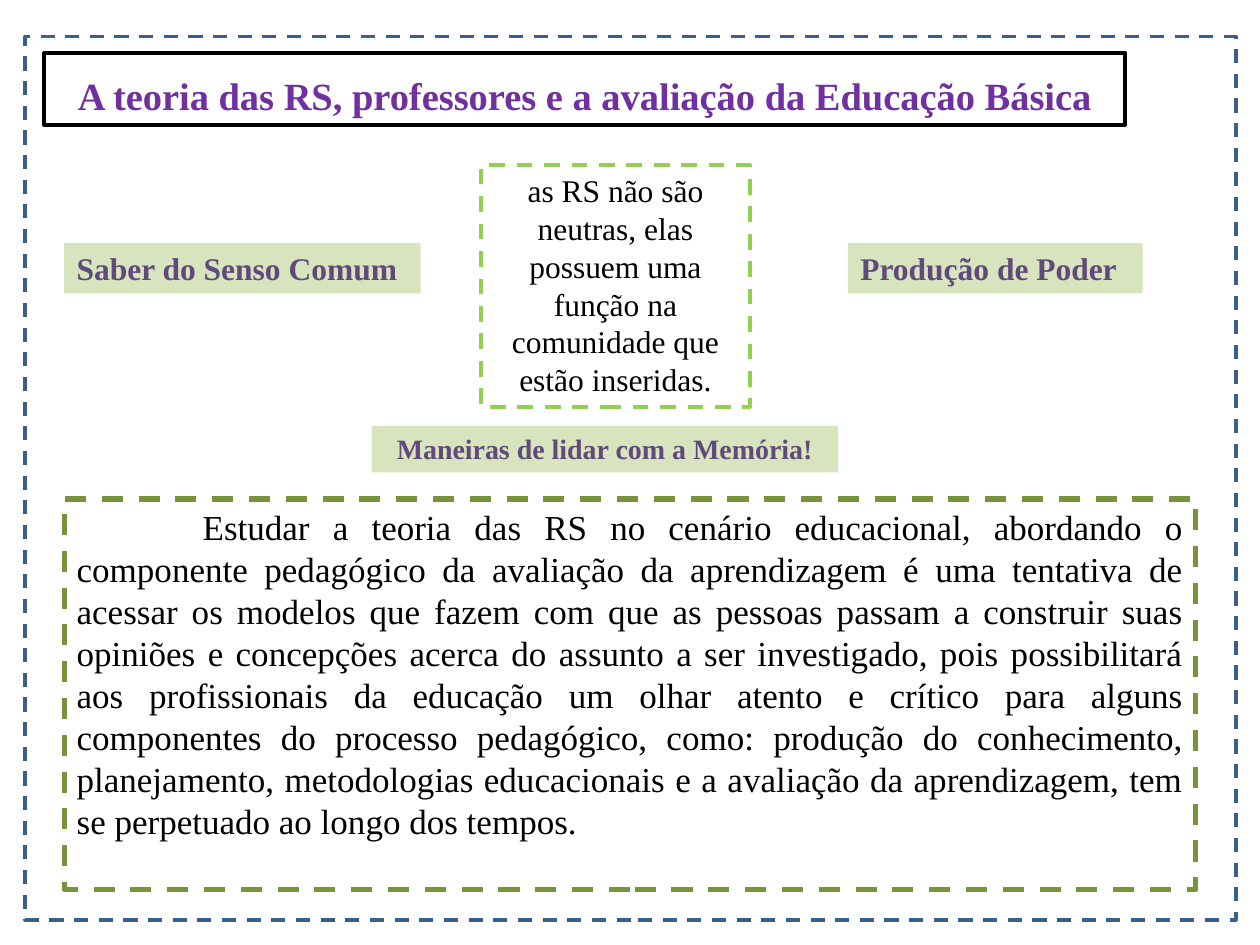
import pptx
import pptx.dml.color
import pptx.enum.dml
import pptx.enum.shapes
import pptx.enum.text
import pptx.util

COLORS = {
    "frame": "3A5F8C",
    "olive": "77933C",
    "lime": "92D050",
    "label": "D7E4BD",
    "violet": "604A7B",
    "purple": "7030A0",
    "black": "000000",
}
ALIGN = pptx.enum.text.PP_ALIGN
ANCHOR = pptx.enum.text.MSO_ANCHOR
BODY = (
    "Estudar a teoria das RS no cenário educacional, abordando o componente "
    "pedagógico da avaliação da aprendizagem é uma tentativa de acessar os modelos "
    "que fazem com que as pessoas passam a construir suas opiniões e concepções "
    "acerca do assunto a ser investigado, pois possibilitará aos profissionais da "
    "educação um olhar atento e crítico para alguns componentes do processo "
    "pedagógico, como: produção do conhecimento, planejamento, metodologias "
    "educacionais e a avaliação da aprendizagem, tem se perpetuado ao longo dos tempos."
)


def rgb(name):
    return pptx.dml.color.RGBColor.from_string(COLORS[name])


def write_text(shape, text, size=18, color="black", bold=False, align=ALIGN.LEFT,
               anchor=ANCHOR.TOP, indent=0):
    """Fill the shape with one paragraph; indent is that of its first line, in inches."""
    frame = shape.text_frame
    frame.word_wrap = True
    frame.vertical_anchor = anchor
    paragraph = frame.paragraphs[0]
    paragraph.alignment = align
    if indent:
        paragraph._p.get_or_add_pPr().set("indent", str(pptx.util.Inches(indent)))
    run = paragraph.add_run()
    run.text = text
    run.font.name = "Times New Roman"
    run.font.size = pptx.util.Pt(size)
    run.font.bold = bold
    run.font.color.rgb = rgb(color)


class SlideBuilder:
    """Places elements on a grid of 100 columns by 75 rows."""

    columns, rows = 100, 75

    def __init__(self, presentation):
        self.slide = presentation.slides.add_slide(presentation.slide_layouts[6])
        self.column = presentation.slide_width / self.columns
        self.row = presentation.slide_height / self.rows

    def place(self, left, top, width, height):
        return (round(left * self.column), round(top * self.row),
                round(width * self.column), round(height * self.row))

    def outline(self, shape, color, width, dashed=True):
        shape.line.color.rgb = rgb(color)
        shape.line.width = pptx.util.Pt(width)
        if dashed:
            shape.line.dash_style = pptx.enum.dml.MSO_LINE.DASH

    def frame(self, area, color, width):
        shape = self.slide.shapes.add_shape(
            pptx.enum.shapes.MSO_SHAPE.RECTANGLE, *self.place(*area))
        shape.shadow.inherit = False
        shape.fill.background()
        self.outline(shape, color, width)

    def outlined_text(self, area, text, line_color, line_width, dashed=True, **text_format):
        box = self.slide.shapes.add_textbox(*self.place(*area))
        self.outline(box, line_color, line_width, dashed)
        write_text(box, text, **text_format)

    def label(self, area, text, **text_format):
        box = self.slide.shapes.add_textbox(*self.place(*area))
        box.fill.solid()
        box.fill.fore_color.rgb = rgb("label")
        write_text(box, text, color="violet", bold=True, **text_format)


def main():
    presentation = pptx.Presentation()
    presentation.slide_width = pptx.util.Inches(10)
    presentation.slide_height = pptx.util.Inches(7.5)
    builder = SlideBuilder(presentation)

    builder.frame((2, 2.9, 96.1, 70.1), "frame", 2)
    builder.outlined_text((5.1, 39.6, 89.8, 31), BODY, "olive", 3,
                          size=20, align=ALIGN.JUSTIFY, indent=1)
    builder.label((29.5, 33.8, 37, 3.7), "Maneiras de lidar com a Memória!",
                  size=16, align=ALIGN.CENTER)
    builder.label((5.1, 19.3, 28.3, 4), "Saber do Senso Comum")
    builder.label((67.3, 19.3, 23.4, 4), "Produção de Poder")
    builder.outlined_text(
        (38.2, 13.1, 21.3, 19.2),
        "as RS não são neutras, elas possuem uma função na comunidade que estão inseridas.",
        "lime", 2.25, align=ALIGN.CENTER)
    builder.outlined_text(
        (3.5, 4.2, 85.8, 5.7),
        "A teoria das RS, professores e a avaliação da Educação Básica",
        "black", 2.25, dashed=False, size=22, color="purple", bold=True,
        align=ALIGN.CENTER, anchor=ANCHOR.BOTTOM)

    presentation.save("out.pptx")


if __name__ == "__main__":
    main()
